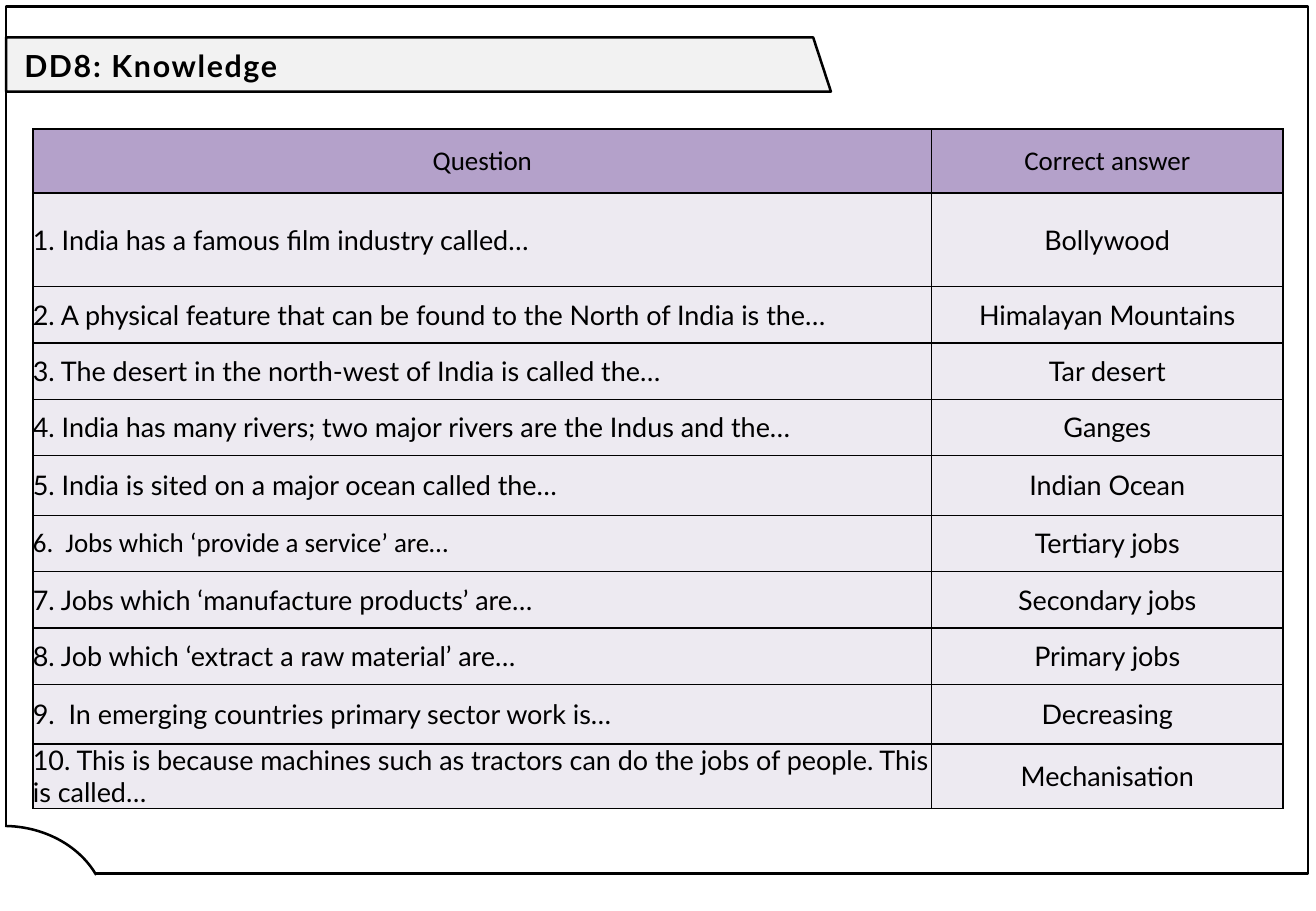
import pptx
import pptx.util
import pptx.dml.color
import pptx.enum.shapes
import pptx.enum.text
import lxml.etree

Pt = pptx.util.Pt
RGBColor = pptx.dml.color.RGBColor
Shape = pptx.enum.shapes.MSO_SHAPE
Align = pptx.enum.text.PP_ALIGN
Anchor = pptx.enum.text.MSO_ANCHOR

BLACK = RGBColor(0, 0, 0)
WHITE = RGBColor(255, 255, 255)
BANNER_GREY = RGBColor(0xF2, 0xF2, 0xF2)
HEADER_PURPLE = RGBColor(0xB4, 0xA1, 0xCA)
ROW_LILAC = RGBColor(0xED, 0xEA, 0xF1)

TITLE = "DD8: Knowledge"
HEADINGS = ("Question", "Correct answer")
QUIZ = [
    ("1. India has a famous film industry called…", "Bollywood"),
    ("2. A physical feature that can be found to the North of India is the…", "Himalayan Mountains"),
    ("3. The desert in the north-west of India is called the…", "Tar desert"),
    ("4. India has many rivers; two major rivers are the Indus and the…", "Ganges"),
    ("5. India is sited on a major ocean called the…", "Indian Ocean"),
    ("6.  Jobs which ‘provide a service’ are…", "Tertiary jobs"),
    ("7. Jobs which ‘manufacture products’ are…", "Secondary jobs"),
    ("8. Job which ‘extract a raw material’ are…", "Primary jobs"),
    ("9.  In emerging countries primary sector work is…", "Decreasing"),
    ("10. This is because machines such as tractors can do the jobs of people. This is called…", "Mechanisation"),
]
CALIBRI_CELLS = {(0, 0), (0, 1), (6, 0)}
COLUMN_WIDTHS = (532.8, 208.1)
ROW_HEIGHT = 33.4
SPECIAL_HEIGHTS = {0: 38, 1: 55.4, 5: 35.4, 9: 35.4, 10: 36}
QUIZ_LEFT, QUIZ_TOP = 19.5, 76.5
BANNER_OUTLINE = [(3.6, 22.2), (482, 22.2), (492.5, 54.3), (3.6, 54.3)]
LINE_WIDTH = 1.5


def write(frame, text, size=16, font="Lato", bold=False, align=Align.LEFT,
          line_spacing=None, space_after=0, tracking=0):
    paragraph = frame.paragraphs[0]
    paragraph.alignment = align
    paragraph.line_spacing = line_spacing
    paragraph.space_before = Pt(0)
    paragraph.space_after = Pt(space_after)
    run = paragraph.add_run()
    run.text = text
    run.font.size = Pt(size)
    run.font.name = font
    run.font.bold = bold
    run.font.color.rgb = BLACK
    if tracking:
        run.font._element.set("spc", str(tracking * 100))


def style(part, fill=None, outlined=True):
    part.shadow.inherit = False
    if fill is None:
        part.fill.background()
    else:
        part.fill.solid()
        part.fill.fore_color.rgb = fill
    if outlined:
        part.line.color.rgb = BLACK
        part.line.width = Pt(LINE_WIDTH)
    else:
        part.line.fill.background()


def add_borders(cell):
    properties = cell._tc.get_or_add_tcPr()
    namespace = "http://schemas.openxmlformats.org/drawingml/2006/main"
    for side in ("lnL", "lnR", "lnT", "lnB"):
        border = lxml.etree.SubElement(properties, f"{{{namespace}}}{side}", w=str(Pt(1)))
        solid = lxml.etree.SubElement(border, f"{{{namespace}}}solidFill")
        lxml.etree.SubElement(solid, f"{{{namespace}}}srgbClr", val=str(BLACK))


def add_background(slide):
    outline = slide.shapes.build_freeform(
        Pt(BANNER_OUTLINE[0][0]), Pt(BANNER_OUTLINE[0][1]))
    outline.add_line_segments([(Pt(x), Pt(y)) for x, y in BANNER_OUTLINE[1:]], close=True)
    style(outline.convert_to_shape(), BANNER_GREY)

    border = slide.shapes.add_shape(Shape.RECTANGLE, Pt(3.6), Pt(3.8), Pt(771.8), Pt(514))
    style(border)

    corner = slide.shapes.add_shape(Shape.ARC, Pt(-59), Pt(489.6), Pt(122.4), Pt(104.4))
    corner.adjustments[0] = 162.525
    corner.adjustments[1] = 202.265
    style(corner, WHITE)

    corner_edge = slide.shapes.add_shape(Shape.RECTANGLE, Pt(0.7), Pt(490.5), Pt(3.3), Pt(7.2))
    style(corner_edge, WHITE, outlined=False)


def add_title(slide):
    title = slide.shapes.title
    title.left, title.top, title.width, title.height = Pt(7.2), Pt(15.1), Pt(463), Pt(45.4)
    title.text_frame.word_wrap = True
    title.text_frame.auto_size = pptx.enum.text.MSO_AUTO_SIZE.NONE
    title.text_frame.vertical_anchor = Anchor.MIDDLE
    write(title.text_frame, TITLE, size=18, bold=True, line_spacing=1.07,
          space_after=8, tracking=1)
    title.element.getparent().append(title.element)


def add_quiz(slide):
    rows = [HEADINGS] + QUIZ
    heights = [SPECIAL_HEIGHTS.get(index, ROW_HEIGHT) for index in range(len(rows))]
    quiz = slide.shapes.add_table(
        len(rows), len(HEADINGS), Pt(QUIZ_LEFT), Pt(QUIZ_TOP),
        Pt(sum(COLUMN_WIDTHS)), Pt(sum(heights))).table
    quiz.first_row = quiz.horz_banding = False
    for column, width in zip(quiz.columns, COLUMN_WIDTHS):
        column.width = Pt(width)
    for row, (texts, height) in enumerate(zip(rows, heights)):
        quiz.rows[row].height = Pt(height)
        for column, text in enumerate(texts):
            cell = quiz.cell(row, column)
            cell.margin_left = cell.margin_right = cell.margin_top = cell.margin_bottom = Pt(0)
            cell.vertical_anchor = Anchor.MIDDLE
            add_borders(cell)
            cell.fill.solid()
            cell.fill.fore_color.rgb = ROW_LILAC if row else HEADER_PURPLE
            write(cell.text_frame, text,
                  font="Calibri" if (row, column) in CALIBRI_CELLS else "Lato",
                  align=Align.LEFT if row and column == 0 else Align.CENTER)


def main():
    deck = pptx.Presentation()
    deck.slide_width, deck.slide_height = Pt(780), Pt(540)
    slide = deck.slides.add_slide(deck.slide_layouts[5])
    add_background(slide)
    add_quiz(slide)
    add_title(slide)
    deck.save("out.pptx")


if __name__ == "__main__":
    main()
